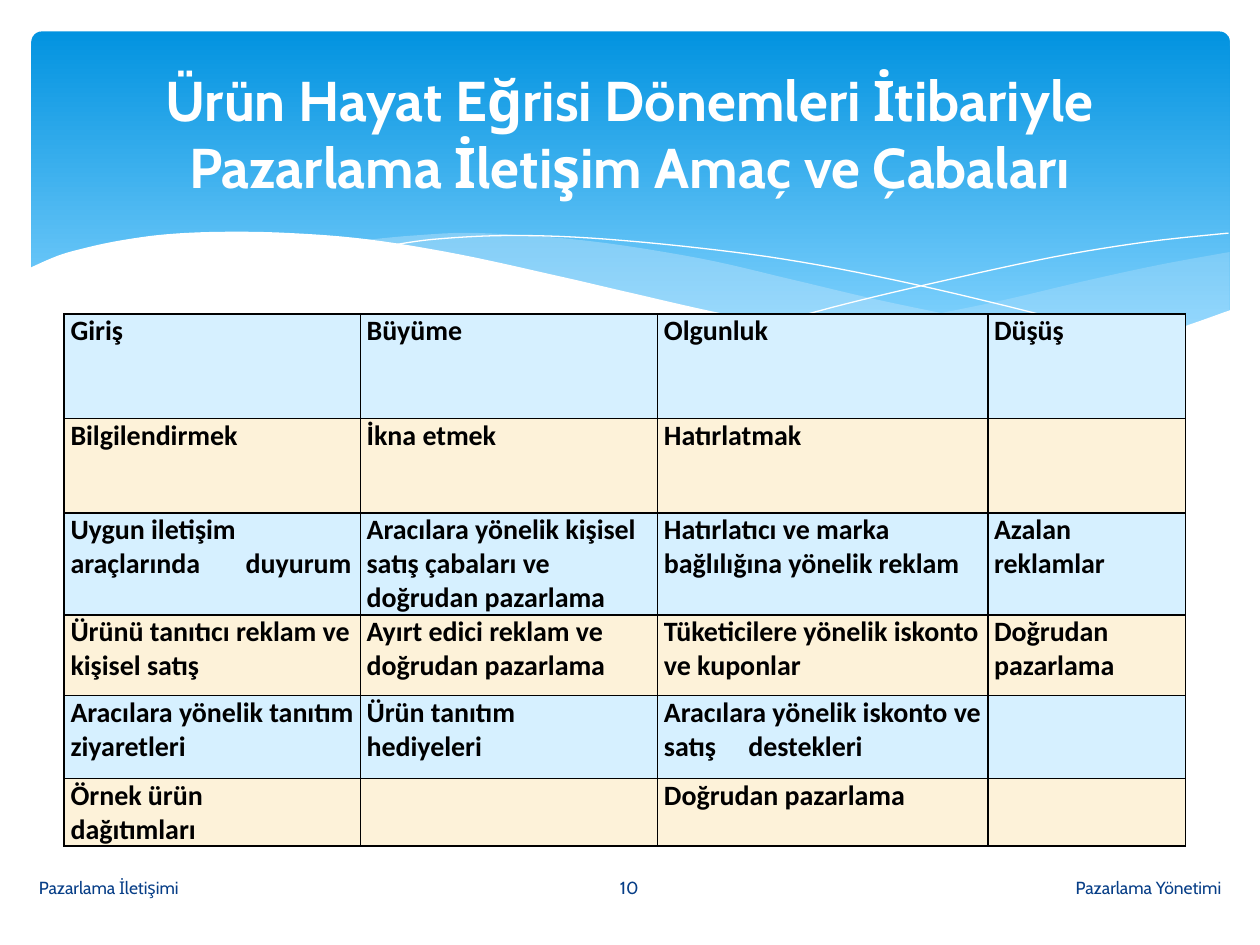
from lxml.etree import SubElement
from pptx import Presentation
from pptx.dml.color import RGBColor
from pptx.enum.shapes import MSO_SHAPE
from pptx.enum.text import MSO_ANCHOR, PP_ALIGN
from pptx.oxml.ns import qn
from pptx.util import Inches, Pt

SLIDE_WIDTH, SLIDE_HEIGHT = Inches(10), Inches(7.5)
GRID_COLUMNS, GRID_ROWS = 100, 75

COLORS = {
    "sky_top": "0293E0", "sky_bottom": "83D3FE", "wave": "C6E7FC",
    "white": "FFFFFF", "black": "000000", "footer": "073E87",
    "blue_row": "D6F0FF", "cream_row": "FDF2D9",
}
TITLE_FORMAT = {"name": "Cabin", "size": Pt(32), "bold": True}
FOOTER_FORMAT = {"name": "Cabin", "size": Pt(10)}
CELL_FORMAT = {"name": "Calibri", "size": Pt(16), "bold": True}
CELL_MARGINS = {
    "margin_left": Inches(0.05), "margin_right": Inches(0.05),
    "margin_top": 0, "margin_bottom": 0,
}

TITLE = "Ürün Hayat Eğrisi Dönemleri İtibariyle Pazarlama İletişim Amaç ve Çabaları"
FOOTERS = [
    ("Pazarlama Yönetimi", (56.5, 68.4, 41.4, 4), PP_ALIGN.RIGHT),
    ("Pazarlama İletişimi", (2.1, 68.4, 41.4, 4), PP_ALIGN.LEFT),
    ("10", (43.6, 68.4, 12.7, 4), PP_ALIGN.CENTER),
]
COLUMN_WIDTHS = [23.5, 23.6, 26.2, 15.7]
ROW_HEIGHTS = [8.3, 7.5, 8.1, 6.4, 6.6, 4.7]
TAB_STOPS = {0: 13.9, 2: 6.7}
ROWS = [
    ["Giriş", "Büyüme", "Olgunluk", "Düşüş"],
    ["Bilgilendirmek", "İkna etmek", "Hatırlatmak", ""],
    ["Uygun iletişim araçlarında\tduyurum",
     "Aracılara yönelik kişisel satış çabaları ve doğrudan pazarlama",
     "Hatırlatıcı ve marka bağlılığına yönelik reklam", "Azalan reklamlar"],
    ["Ürünü tanıtıcı reklam ve kişisel satış",
     "Ayırt edici reklam ve doğrudan pazarlama",
     "Tüketicilere yönelik iskonto ve kuponlar", "Doğrudan pazarlama"],
    ["Aracılara yönelik tanıtım ziyaretleri", "Ürün tanıtım\vhediyeleri",
     "Aracılara yönelik iskonto ve satış\tdestekleri", ""],
    ["Örnek ürün\vdağıtımları", "", "Doğrudan pazarlama", ""],
]

RIGHT_WAVE = [
    [(97.6, 20), (92.1, 21), (86.1, 22.3), (77.9, 24.2), (66.1, 26.5)],
    [(66.1, 26.5), (73.2, 27.4), (81.4, 27.8), (88.1, 27.3), (93.5, 26.2), (97.6, 24.7)],
]
MIDDLE_WAVE = [
    [(89.3, 27.3), (80.7, 26), (70.6, 24), (62.9, 22.2), (55.5, 20.5),
     (46.5, 19.1), (38, 18.5), (32.8, 18.7), (28.6, 19.1)],
    [(28.6, 19.1), (36.2, 20.3), (44.9, 22.2), (56.6, 24.8), (66.5, 26.6),
     (74.8, 27.6), (81.8, 27.8), (89.3, 27.3)],
]
FRONT_WAVE = [
    [(97.7, 24.6), (92, 26.5), (86.3, 27.4), (80.9, 27.7), (74.4, 27.4),
     (66.8, 26.5), (57.9, 25), (50.3, 23.3), (44.7, 22), (36.5, 20.2),
     (29.2, 19), (23, 18.5), (17.7, 18.4), (13.2, 18.6), (9.5, 19.1),
     (6.7, 19.7), (4.6, 20.3), (2.3, 21.3)],
    [(2.3, 32.9), (97.7, 32.9)],
]
FALLING_LINE = [
    (30.9, 19.5), (34.4, 19), (40.1, 18.7), (46.9, 18.9), (55.6, 19.7),
    (63.6, 20.8), (72.7, 22.6), (83.1, 25.1), (90.7, 27.2),
]
RISING_LINE = [
    (61.3, 25.7), (67.2, 24.1), (74.8, 22.3), (83.6, 20.4), (91, 19.2), (97.5, 18.5),
]


def across(columns):
    return round(SLIDE_WIDTH * columns / GRID_COLUMNS)


def down(rows):
    return round(SLIDE_HEIGHT * rows / GRID_ROWS)


def place(left, top, width, height):
    return across(left), down(top), across(width), down(height)


def color(name):
    return RGBColor.from_string(COLORS[name])


def apply_format(target, values):
    for name, value in values.items():
        setattr(target, name, value)


def smooth(knots, steps=6):
    padded = [knots[0], *knots, knots[-1]]
    points = []
    for before, start, end, after in zip(padded, padded[1:], padded[2:], padded[3:]):
        for step in range(steps):
            t = step / steps
            points.append(tuple(
                b + t * (c - a) / 2
                + t ** 2 * (a - 2.5 * b + 2 * c - d / 2)
                + t ** 3 * (1.5 * (b - c) + (d - a) / 2)
                for a, b, c, d in zip(before, start, end, after)
            ))
    return points + [knots[-1]]


def add_outline(slide, points, closed):
    corners = [(across(x), down(y)) for x, y in points]
    builder = slide.shapes.build_freeform(*corners[0])
    builder.add_line_segments(corners[1:], close=closed)
    shape = builder.convert_to_shape()
    shape.shadow.inherit = False
    return shape


def add_wave(slide, edges, fill, opacity=100):
    points = [point for edge in edges for point in smooth(edge)]
    shape = add_outline(slide, points, True)
    shape.fill.solid()
    shape.fill.fore_color.rgb = color(fill)
    shape.line.fill.background()
    if opacity < 100:
        rgb = shape.fill._xPr.find(".//" + qn("a:srgbClr"))
        SubElement(rgb, qn("a:alpha"), val=str(opacity * 1000))


def add_hairline(slide, knots):
    shape = add_outline(slide, smooth(knots), False)
    shape.fill.background()
    shape.line.color.rgb = color("white")
    shape.line.width = 0


def add_sky(slide):
    shape = slide.shapes.add_shape(MSO_SHAPE.ROUNDED_RECTANGLE, *place(2.5, 2.5, 95.1, 27))
    shape.adjustments[0] = 0.03
    shape.shadow.inherit = False
    shape.line.fill.background()
    shape.fill.gradient()
    shape.fill.gradient_angle = 270
    stops = zip(shape.fill.gradient_stops, ("sky_top", "sky_bottom"), (0, 0.9))
    for stop, name, position in stops:
        stop.color.rgb = color(name)
        stop.position = position


def add_text(slide, text, box, alignment, font_format, color_name):
    frame = slide.shapes.add_textbox(*place(*box)).text_frame
    apply_format(frame, {"word_wrap": True, "vertical_anchor": MSO_ANCHOR.MIDDLE})
    paragraph = frame.paragraphs[0]
    apply_format(paragraph, {"text": text, "alignment": alignment})
    apply_format(paragraph.font, font_format)
    paragraph.font.color.rgb = color(color_name)


def add_borders(cell):
    properties = cell._tc.get_or_add_tcPr()
    for index, side in enumerate(("lnL", "lnR", "lnT", "lnB")):
        line = SubElement(properties, qn("a:" + side), w=str(Pt(1)))
        fill = SubElement(line, qn("a:solidFill"))
        SubElement(fill, qn("a:srgbClr"), val=COLORS["black"])
        properties.insert(index, line)


def add_tab_stop(paragraph, columns):
    tabs = SubElement(paragraph._p.get_or_add_pPr(), qn("a:tabLst"))
    SubElement(tabs, qn("a:tab"), pos=str(across(columns)), algn="l")
    paragraph._p.pPr.insert(0, tabs)


def fill_cell(cell, text, fill, column):
    apply_format(cell, CELL_MARGINS)
    cell.fill.solid()
    cell.fill.fore_color.rgb = color(fill)
    add_borders(cell)
    cell.text = text
    paragraph = cell.text_frame.paragraphs[0]
    apply_format(paragraph.font, CELL_FORMAT)
    paragraph.font.color.rgb = color("black")
    if "\t" in text:
        add_tab_stop(paragraph, TAB_STOPS[column])


def add_period_table(slide):
    box = place(5.1, 24.9, sum(COLUMN_WIDTHS), sum(ROW_HEIGHTS))
    table = slide.shapes.add_table(len(ROWS), len(COLUMN_WIDTHS), *box).table
    for column, width in zip(table.columns, COLUMN_WIDTHS):
        column.width = across(width)
    for row, height in zip(table.rows, ROW_HEIGHTS):
        row.height = down(height)
    for row_index, texts in enumerate(ROWS):
        fill = ("blue_row", "cream_row")[row_index % 2]
        for column_index, text in enumerate(texts):
            fill_cell(table.cell(row_index, column_index), text, fill, column_index)


def main():
    presentation = Presentation()
    apply_format(presentation, {"slide_width": SLIDE_WIDTH, "slide_height": SLIDE_HEIGHT})
    slide = presentation.slides.add_slide(presentation.slide_layouts[6])
    add_sky(slide)
    add_wave(slide, RIGHT_WAVE, "wave", 29)
    add_wave(slide, MIDDLE_WAVE, "wave", 40)
    for knots in (FALLING_LINE, RISING_LINE):
        add_hairline(slide, knots)
    add_wave(slide, FRONT_WAVE, "white")
    add_text(slide, TITLE, (5, 3.7, 90, 13.7), PP_ALIGN.CENTER, TITLE_FORMAT, "white")
    for text, box, alignment in FOOTERS:
        add_text(slide, text, box, alignment, FOOTER_FORMAT, "footer")
    add_period_table(slide)
    presentation.save("out.pptx")


if __name__ == "__main__":
    main()
